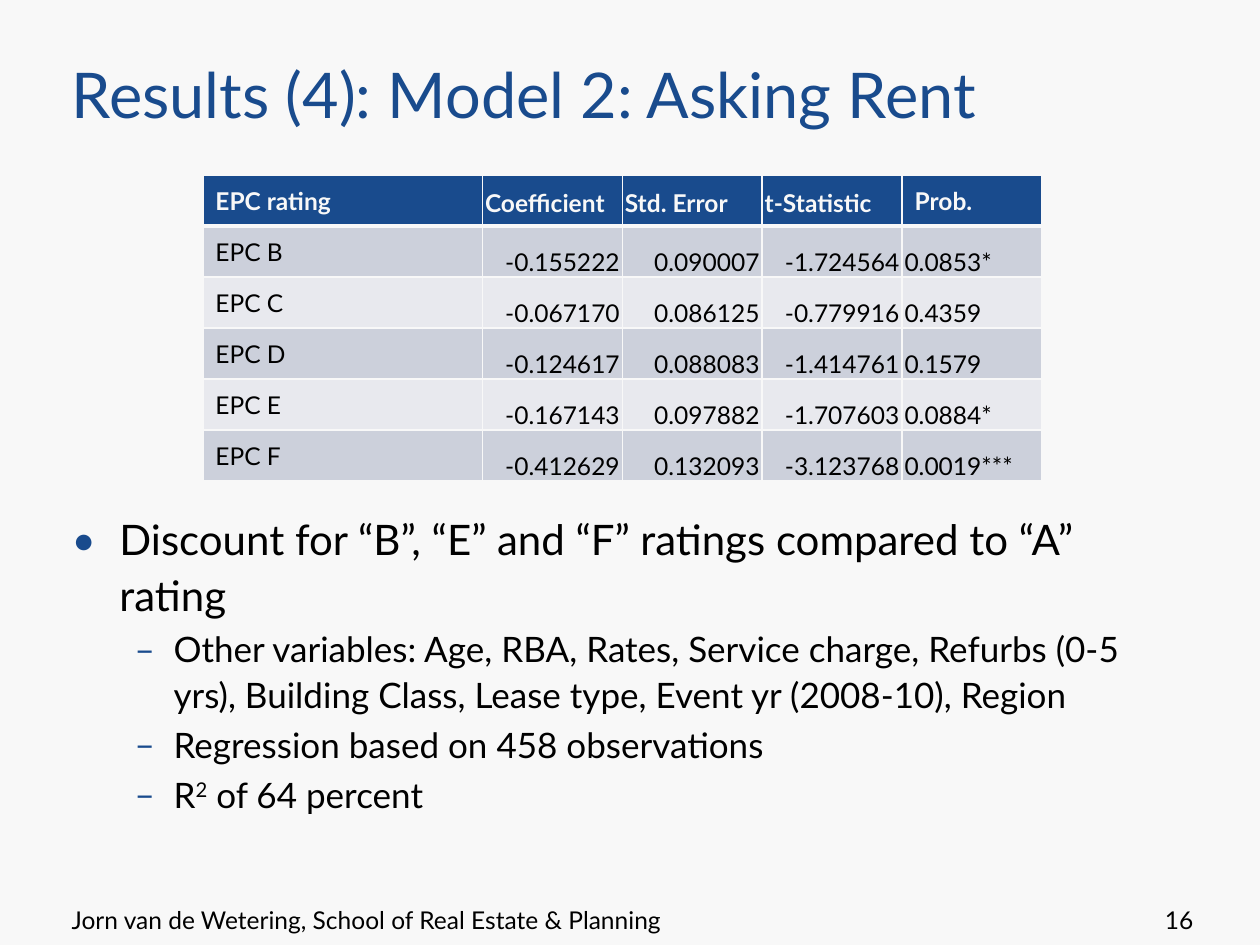
from lxml.etree import SubElement
from pptx import Presentation
from pptx.dml.color import RGBColor
from pptx.enum.text import MSO_ANCHOR as Anchor, PP_ALIGN as Align
from pptx.oxml.ns import qn
from pptx.util import Inches, Pt

COLORS = {
    "paper": "F8F8F8",
    "blue": "194B8D",
    "text": "000000",
    "dark_band": "CCD0DB",
    "light_band": "E8E9EE",
}
FONT = "Lato"
TABLE_ROWS = [
    ["EPC rating", "Coefficient", "Std. Error", "t-Statistic", "Prob."],
    ["EPC B", "-0.155222", "0.090007", "-1.724564", "0.0853*"],
    ["EPC C", "-0.067170", "0.086125", "-0.779916", "0.4359"],
    ["EPC D", "-0.124617", "0.088083", "-1.414761", "0.1579"],
    ["EPC E", "-0.167143", "0.097882", "-1.707603", "0.0884*"],
    ["EPC F", "-0.412629", "0.132093", "-3.123768", "0.0019***"],
]
BULLETS = [
    (0, ["Discount for “B”, “E” and “F” ratings compared to “A” rating"]),
    (1, ["Other variables: Age, RBA, Rates, Service charge, Refurbs (0-5 yrs), "
         "Building Class, Lease type, Event yr (2008-10), Region"]),
    (1, ["Regression based on 458 observations"]),
    (1, ["R", "2", " of 64 percent"]),
]
LEVELS = [
    {"mark": "•", "size": 24, "left": 0.38, "hang": 0.38, "before": 0},
    {"mark": "–", "size": 20, "left": 0.81, "hang": 0.31, "before": 2},
]


def rgb(name):
    return RGBColor.from_string(COLORS[name])


def add_span(para, text, size, color="text", bold=False):
    span = para.add_run()
    span.text = text
    span.font.name = FONT
    span.font.size = Pt(size)
    span.font.bold = bold
    span.font.color.rgb = rgb(color)
    return span


def add_box(page, left, top, width, height):
    box = page.shapes.add_textbox(
        Inches(left), Inches(top), Inches(width), Inches(height))
    box.text_frame.word_wrap = True
    return box.text_frame


def add_footer(page, text, left, width, align):
    para = add_box(page, left, 7.13, width, 0.37).paragraphs[0]
    para.alignment = align
    add_span(para, text, 14)


def set_title(page, text):
    title = page.shapes.title
    title.left, title.top = Inches(0.47), Inches(0.3)
    title.width, title.height = Inches(7.66), Inches(0.79)
    frame = title.text_frame
    frame.word_wrap = False
    frame.vertical_anchor = Anchor.BOTTOM
    para = frame.paragraphs[0]
    para.alignment = Align.LEFT
    add_span(para, text, 36, "blue")


def set_bullet(para, level):
    props = para._p.get_or_add_pPr()
    props.set("marL", str(Inches(level["left"])))
    props.set("indent", str(-Inches(level["hang"])))
    color = SubElement(props, qn("a:buClr"))
    SubElement(color, qn("a:srgbClr"), val=COLORS["blue"])
    SubElement(props, qn("a:buFont"), typeface=FONT)
    SubElement(props, qn("a:buChar"), char=level["mark"])


def add_bullets(page):
    frame = add_box(page, 0.47, 3.99, 9.03, 2.97)
    for index, (depth, texts) in enumerate(BULLETS):
        para = frame.paragraphs[0] if index == 0 else frame.add_paragraph()
        level = LEVELS[depth]
        para.level = depth
        set_bullet(para, level)
        para.line_spacing = 1.1
        para.space_before = Pt(level["before"])
        for text in texts:
            span = add_span(para, text, level["size"])
            if text == "2":
                span.font._element.set("baseline", "30000")


def set_borders(cell, row):
    props = cell._tc.get_or_add_tcPr()
    widths = {"L": 1, "R": 1, "T": 3 if row == 1 else 1, "B": 3 if row == 0 else 1}
    for side, width in widths.items():
        line = SubElement(props, qn(f"a:ln{side}"), w=str(Pt(width)))
        fill = SubElement(line, qn("a:solidFill"))
        SubElement(fill, qn("a:srgbClr"), val=COLORS["paper"])


def fill_cell(cell, text, row, column):
    header = row == 0
    label = column == 0
    set_borders(cell, row)
    cell.fill.solid()
    band = "blue" if header else "dark_band" if row % 2 else "light_band"
    cell.fill.fore_color.rgb = rgb(band)
    cell.vertical_anchor = Anchor.MIDDLE if header or label else Anchor.BOTTOM
    para = cell.text_frame.paragraphs[0]
    if not label and not (header and column == 4):
        cell.margin_left = cell.margin_right = Inches(0.02)
        cell.margin_top = cell.margin_bottom = 0
        para.line_spacing = 1.15
    numeric = not header and column in (1, 2, 3)
    para.alignment = Align.RIGHT if numeric else Align.LEFT
    add_span(para, text, 14, "paper" if header else "text", header)


def add_results(page):
    table = page.shapes.add_table(
        len(TABLE_ROWS), len(TABLE_ROWS[0]),
        Inches(1.61), Inches(1.39), Inches(6.67), Inches(2.43)).table
    for index, column in enumerate(table.columns):
        column.width = Inches(2.22 if index == 0 else 1.11)
    for row, values in enumerate(TABLE_ROWS):
        table.rows[row].height = Inches(2.43 / len(TABLE_ROWS))
        for column, text in enumerate(values):
            fill_cell(table.cell(row, column), text, row, column)


def main():
    deck = Presentation()
    deck.slide_width, deck.slide_height = Inches(10), Inches(7.5)
    page = deck.slides.add_slide(deck.slide_layouts[5])
    page.background.fill.solid()
    page.background.fill.fore_color.rgb = rgb("paper")
    add_footer(page, "Jorn van de Wetering, School of Real Estate & Planning",
               0.47, 7.29, Align.LEFT)
    set_title(page, "Results (4): Model 2: Asking Rent")
    add_bullets(page)
    add_footer(page, "16", 8.83, 0.74, Align.RIGHT)
    add_results(page)
    deck.save("out.pptx")


if __name__ == "__main__":
    main()
